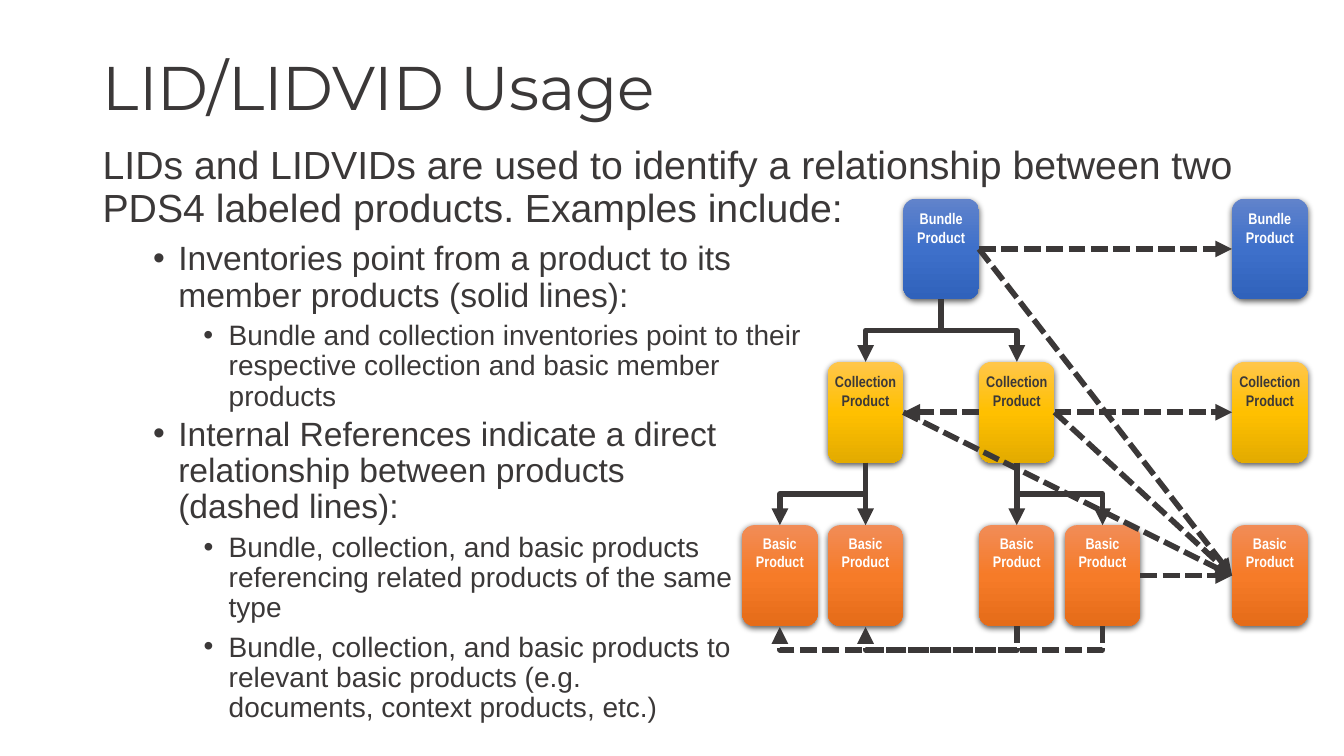
from copy import deepcopy
from lxml.etree import SubElement
from pptx import Presentation
from pptx.dml.color import RGBColor
from pptx.enum.dml import MSO_LINE
from pptx.enum.shapes import MSO_CONNECTOR, MSO_SHAPE
from pptx.enum.text import MSO_ANCHOR, PP_ALIGN
from pptx.oxml.ns import qn
from pptx.util import Inches, Pt

COLORS = {
    "ink": "3B3838",
    "white": "FFFFFF",
    "shadow": "000000",
    "bundle": ["6183CB", "3E70CA", "3062BB"],
    "collection": ["FFC64B", "FFC000", "E3AB00"],
    "basic": ["F18C57", "F67B28", "E56C19"],
}


def format_paragraph(paragraph, layout, color, **font_values):
    for name, value in layout.items():
        setattr(paragraph, name, value)
    for name, value in font_values.items():
        setattr(paragraph.font, name, value)
    paragraph.font.color.rgb = RGBColor.from_string(COLORS[color])


def add_element(parent, tag, **attributes):
    return SubElement(parent, qn(tag), {name: str(value) for name, value in attributes.items()})


presentation = Presentation()
presentation.slide_width = Inches(13.33)
presentation.slide_height = Inches(7.5)
slide = presentation.slides.add_slide(presentation.slide_layouts[5])

title = slide.shapes.title
title.left, title.top, title.width, title.height = map(Inches, (0.92, 0.4, 11.5, 1))
title.text_frame.text = "LID/LIDVID Usage"
title.text_frame.vertical_anchor = MSO_ANCHOR.MIDDLE
format_paragraph(title.text_frame.paragraphs[0], {"alignment": PP_ALIGN.LEFT, "line_spacing": 0.9},
                 "ink", name="Montserrat", size=Pt(44))

tiers = {
    "bundle": {"top": 1.97, "inset": 0.07, "color": "white", "text": "Bundle\nProduct", "lefts": [8.96, 12.22]},
    "collection": {"top": 3.59, "inset": 0.07, "color": "ink", "text": "Collection Product",
                   "lefts": [8.21, 9.71, 12.22]},
    "basic": {"top": 5.21, "inset": 0.05, "color": "white", "text": "Basic\nProduct",
              "lefts": [7.36, 8.21, 9.71, 10.56, 12.22]},
}
boxes = {}
for tier_name, tier in tiers.items():
    boxes[tier_name] = []
    for left in tier["lefts"]:
        box = slide.shapes.add_shape(MSO_SHAPE.ROUNDED_RECTANGLE, Inches(left), Inches(tier["top"]),
                                     Inches(0.75), Inches(1))
        boxes[tier_name].append(box)
        box.line.fill.background()
        box.fill.gradient()
        box.fill.gradient_angle = 270
        stop_list = box._element.spPr.find(".//" + qn("a:gsLst"))
        stop_list.append(deepcopy(stop_list[-1]))
        for index, stop in enumerate(box.fill.gradient_stops):
            stop.position = index / 2
            stop.color.rgb = RGBColor.from_string(COLORS[tier_name][index])

        box.shadow.inherit = False
        effects = box._element.spPr.find(qn("a:effectLst"))
        shadow = add_element(effects, "a:outerShdw", blurRad=Pt(4.5), dist=Pt(1.5), dir=5400000,
                             algn="ctr", rotWithShape=0)
        shadow_color = add_element(shadow, "a:srgbClr", val=COLORS["shadow"])
        add_element(shadow_color, "a:alpha", val=63000)

        frame = box.text_frame
        frame.text = tier["text"]
        frame_format = {"word_wrap": True, "vertical_anchor": MSO_ANCHOR.TOP, "margin_left": 0,
                        "margin_right": 0, "margin_top": Inches(tier["inset"]), "margin_bottom": 0}
        for name, value in frame_format.items():
            setattr(frame, name, value)
        for paragraph in frame.paragraphs:
            format_paragraph(paragraph, {"alignment": PP_ALIGN.CENTER}, tier["color"],
                             name="Arial Narrow", size=Pt(11), bold=True)

bundle, related_bundle = boxes["bundle"]
first_collection, second_collection, related_collection = boxes["collection"]
first_basic, second_basic, third_basic, fourth_basic, related_basic = boxes["basic"]
TOP, LEFT, BOTTOM, RIGHT = range(4)

arrows = [
    (bundle, BOTTOM, first_collection, TOP, "solid"),
    (bundle, BOTTOM, second_collection, TOP, "solid"),
    (first_collection, BOTTOM, first_basic, TOP, "solid"),
    (first_collection, BOTTOM, second_basic, TOP, "solid"),
    (second_collection, BOTTOM, third_basic, TOP, "solid"),
    (second_collection, BOTTOM, fourth_basic, TOP, "solid"),
    (bundle, RIGHT, related_bundle, LEFT, "dashed"),
    (second_collection, LEFT, first_collection, RIGHT, "dashed"),
    (second_collection, RIGHT, related_collection, LEFT, "dashed"),
    (first_basic, BOTTOM, third_basic, BOTTOM, "dashed"),
    (second_basic, BOTTOM, fourth_basic, BOTTOM, "dashed"),
    (bundle, RIGHT, related_basic, LEFT, "dashed"),
    (second_collection, RIGHT, related_basic, LEFT, "dashed"),
    (first_collection, RIGHT, related_basic, LEFT, "dashed"),
    (fourth_basic, RIGHT, related_basic, LEFT, "dashed"),
]
for source, source_side, target, target_side, style in arrows:
    bent = source_side == BOTTOM and source.left != target.left
    kind = MSO_CONNECTOR.ELBOW if bent else MSO_CONNECTOR.STRAIGHT
    arrow = slide.shapes.add_connector(kind, 0, 0, 0, 0)
    arrow.begin_connect(source, source_side)
    arrow.end_connect(target, target_side)
    properties = arrow._element.spPr
    if bent:
        run = arrow.end_x - arrow.begin_x
        drop = max(arrow.end_y - arrow.begin_y, Inches(0.01))
        center_x = (arrow.begin_x + arrow.end_x) // 2
        center_y = arrow.begin_y + drop // 2
        arrow.left, arrow.top = center_x - drop // 2, center_y - abs(run) // 2
        arrow.width, arrow.height = drop, abs(run)
        transform = properties.find(qn("a:xfrm"))
        transform.set("rot", str((270 if run > 0 else 90) * 60000))
        transform.set("flipH", "1" if run > 0 else "0")
        if target_side == BOTTOM:
            guides = properties.find(".//" + qn("a:avLst"))
            add_element(guides, "a:gd", name="adj1", fmla="val 2400000")
    arrow.line.width = Pt(4)
    arrow.line.color.rgb = RGBColor.from_string(COLORS["ink"])
    if style == "dashed":
        arrow.line.dash_style = MSO_LINE.SQUARE_DOT
    add_element(properties.find(qn("a:ln")), "a:tailEnd", type="triangle")
    add_element(properties, "a:effectLst")

levels = [
    {"size": 28, "space": 10, "indent": 0},
    {"size": 24, "space": 5, "indent": 0.75},
    {"size": 20, "space": 5, "indent": 1.25},
]
text_blocks = [
    ((0.92, 1.4, 11.5, 0.95), [
        (0, "LIDs and LIDVIDs are used to identify a relationship between two PDS4 labeled products. "
            "Examples include:")]),
    ((0.92, 2.35, 7.13, 1.87), [
        (1, "Inventories point from a product to its member products (solid lines):"),
        (2, "Bundle and collection inventories point to their respective collection and basic member products")]),
    ((0.92, 4.09, 6.45, 2.21), [
        (1, "Internal References indicate a direct relationship between products (dashed lines):"),
        (2, "Bundle, collection, and basic products referencing related products of the same type")]),
    ((0.92, 6.23, 6.45, 1.06), [
        (2, "Bundle, collection, and basic products to relevant basic products "
            "(e.g. documents, context products, etc.)")]),
]
for position, lines in text_blocks:
    frame = slide.shapes.add_textbox(*map(Inches, position)).text_frame
    frame.word_wrap = True
    frame.text = "\n".join(text for _, text in lines)
    for paragraph, (level_number, _) in zip(frame.paragraphs, lines):
        level = levels[level_number]
        layout = {"level": level_number, "line_spacing": 0.9, "space_before": Pt(level["space"])}
        format_paragraph(paragraph, layout, "ink", name="Arial", size=Pt(level["size"]))
        if level["indent"]:
            paragraph_properties = paragraph._p.get_or_add_pPr()
            paragraph_properties.set("marL", str(Inches(level["indent"])))
            paragraph_properties.set("indent", str(Inches(-0.25)))
            bullet_font = add_element(paragraph_properties, "a:buFont", typeface="Arial")
            bullet = add_element(paragraph_properties, "a:buChar", char="•")
            default_run = paragraph_properties.find(qn("a:defRPr"))
            default_run.addprevious(bullet_font)
            default_run.addprevious(bullet)

presentation.save("out.pptx")
